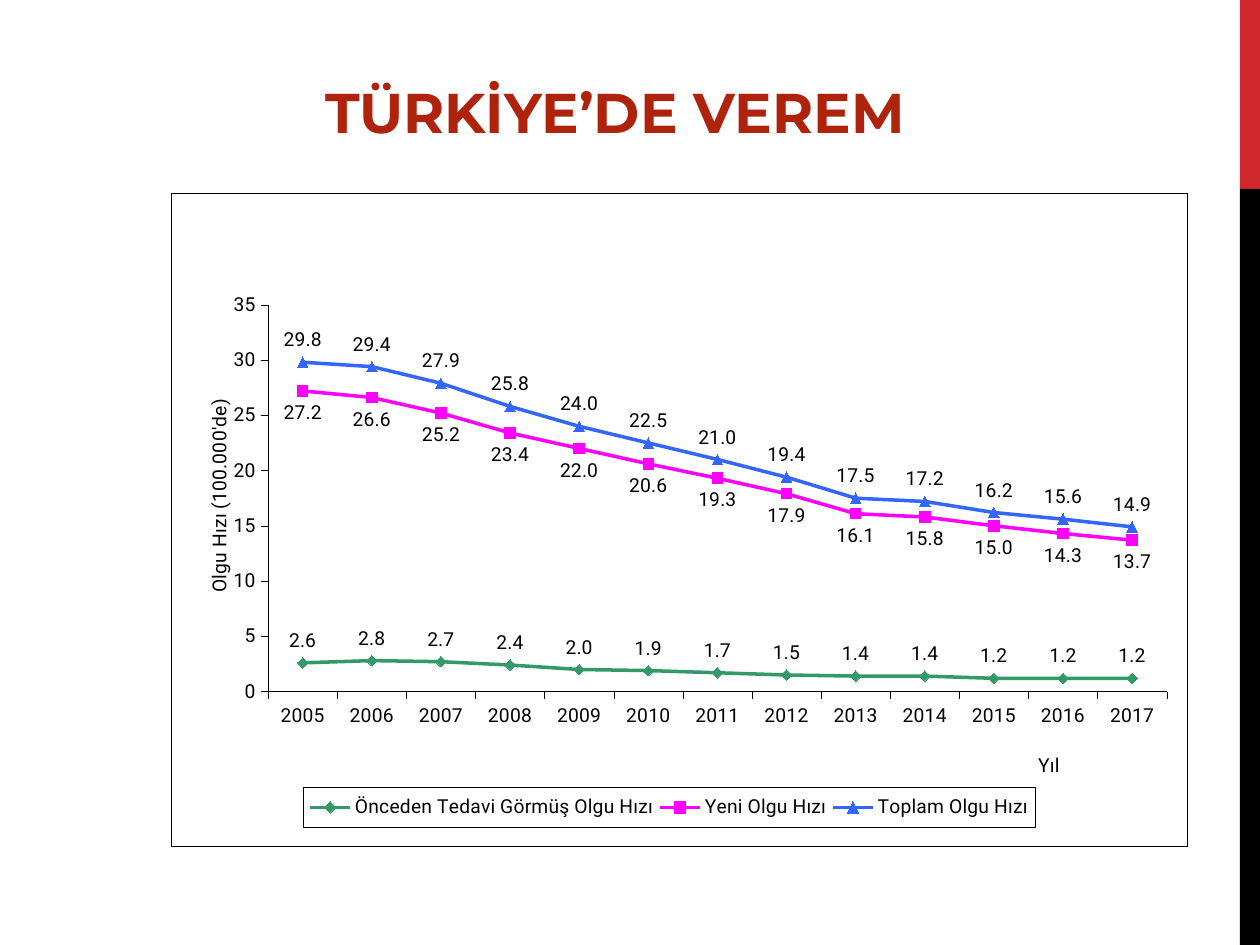
from lxml import etree
from pptx import Presentation
from pptx.chart.data import CategoryChartData
from pptx.dml.color import RGBColor
from pptx.enum.chart import (XL_CHART_TYPE, XL_LABEL_POSITION as POS, XL_LEGEND_POSITION,
                             XL_MARKER_STYLE as MARK, XL_TICK_MARK)
from pptx.enum.shapes import MSO_SHAPE
from pptx.enum.text import MSO_ANCHOR, PP_ALIGN
from pptx.oxml import parse_xml
from pptx.oxml.ns import nsdecls, qn
from pptx.util import Pt

C = {"title": "AF220B", "red": "D1282E", "black": "000000", "white": "FFFFFF",
     "green": "339966", "magenta": "FF00FF", "blue": "3366FF"}


def rgb(name):
    return RGBColor.from_string(C[name])


def place(el, index, x, y, w=None, h=None, inner=False):
    old = el.find(qn("c:layout"))
    if old is not None:
        el.remove(old)
    layout = etree.Element(qn("c:layout"))
    manual = etree.SubElement(layout, qn("c:manualLayout"))
    values = [("layoutTarget", "inner" if inner else None), ("xMode", "edge"),
              ("yMode", "edge"), ("x", x), ("y", y), ("w", w), ("h", h)]
    for tag, val in values:
        if val is not None:
            etree.SubElement(manual, qn("c:" + tag)).set("val", str(val))
    el.insert(index, layout)


prs = Presentation()
prs.slide_width, prs.slide_height = Pt(720), Pt(540)
s = prs.slides.add_slide(prs.slide_layouts[5])

for top, height, color in [(0, 108, "red"), (108, 432, "black")]:
    sp = s.shapes.add_shape(MSO_SHAPE.RECTANGLE, Pt(708.5), Pt(top), Pt(11.5), Pt(height))
    sp.shadow.inherit = False
    sp.fill.solid()
    sp.fill.fore_color.rgb = rgb(color)
    sp.line.fill.background()

title = s.shapes.title
title.left, title.top, title.width, title.height = Pt(127.5), Pt(40.3), Pt(448), Pt(46)
tf = title.text_frame
tf.vertical_anchor = MSO_ANCHOR.MIDDLE
p = tf.paragraphs[0]
p.alignment = PP_ALIGN.CENTER
r = p.add_run()
r.text = "TÜRKİYE’DE VEREM"
r.font.name, r.font.size, r.font.bold = "Montserrat", Pt(32), True
r.font.color.rgb = rgb("title")

series = [
    ("Önceden Tedavi Görmüş Olgu Hızı", "green", MARK.DIAMOND, POS.ABOVE,
     [2.6, 2.8, 2.7, 2.4, 2.0, 1.9, 1.7, 1.5, 1.4, 1.4, 1.2, 1.2, 1.2]),
    ("Yeni Olgu Hızı", "magenta", MARK.SQUARE, POS.BELOW,
     [27.2, 26.6, 25.2, 23.4, 22.0, 20.6, 19.3, 17.9, 16.1, 15.8, 15.0, 14.3, 13.7]),
    ("Toplam Olgu Hızı", "blue", MARK.TRIANGLE, POS.ABOVE,
     [29.8, 29.4, 27.9, 25.8, 24.0, 22.5, 21.0, 19.4, 17.5, 17.2, 16.2, 15.6, 14.9]),
]
data = CategoryChartData(number_format="0.0")
data.categories = [str(year) for year in range(2005, 2018)]
for name, color, marker, pos, values in series:
    data.add_series(name, values)
chart = s.shapes.add_chart(XL_CHART_TYPE.LINE_MARKERS, Pt(98), Pt(110.2), Pt(580.5), Pt(373.7),
                           data).chart
chart.has_title = False
chart.font.name, chart.font.size = "Roboto", Pt(11)
chart.font.color.rgb = rgb("black")

plot = chart.plots[0]
plot.vary_by_categories = False
for ser, (name, color, marker, pos, values) in zip(plot.series, series):
    ser.smooth = False
    ser.format.line.width = Pt(2)
    ser.format.line.color.rgb = rgb(color)
    ser.marker.style, ser.marker.size = marker, 6
    ser.marker.format.fill.solid()
    ser.marker.format.fill.fore_color.rgb = rgb(color)
    ser.marker.format.line.color.rgb = rgb(color)
    labels = ser.data_labels
    labels.show_value, labels.position = True, pos
    labels.number_format, labels.number_format_is_linked = "0.0", False

cat, val = chart.category_axis, chart.value_axis
for axis, text, x, y in [(cat, "Yıl", 0.85, 0.85), (val, "Olgu Hızı (100.000'de)", 0.03, 0.31)]:
    axis.major_tick_mark, axis.minor_tick_mark = XL_TICK_MARK.OUTSIDE, XL_TICK_MARK.NONE
    axis.format.line.width = Pt(0.25)
    axis.format.line.color.rgb = rgb("black")
    p = axis.axis_title.text_frame.paragraphs[0]
    r = p.add_run()
    r.text = text
    r.font.name, r.font.size, r.font.bold = "Roboto", Pt(11), False
    r.font.color.rgb = rgb("black")
    place(axis.axis_title._element, 1, x, y)
val.minimum_scale, val.maximum_scale, val.major_unit = 0, 35, 5
val.tick_labels.number_format, val.tick_labels.number_format_is_linked = "0", False
val.major_gridlines.format.line.width = Pt(0.25)
val.major_gridlines.format.line.color.rgb = rgb("white")

chart.has_legend = True
legend = chart.legend
legend.position, legend.include_in_layout = XL_LEGEND_POSITION.BOTTOM, False
place(legend._element, 1, 0.13, 0.91, 0.72, 0.06)

space = chart._chartSpace
place(space.chart.plotArea, 0, 0.095, 0.171, 0.885, 0.592, inner=True)
frame = (f'<c:spPr {nsdecls("c", "a")}><a:solidFill><a:srgbClr val="{C["white"]}"/></a:solidFill>'
         f'<a:ln w="{Pt(0.25)}"><a:solidFill><a:srgbClr val="{C["black"]}"/></a:solidFill></a:ln>'
         '</c:spPr>')
space.chart.addnext(parse_xml(frame))
legend._element.find(qn("c:overlay")).addnext(parse_xml(frame))

prs.save("out.pptx")
